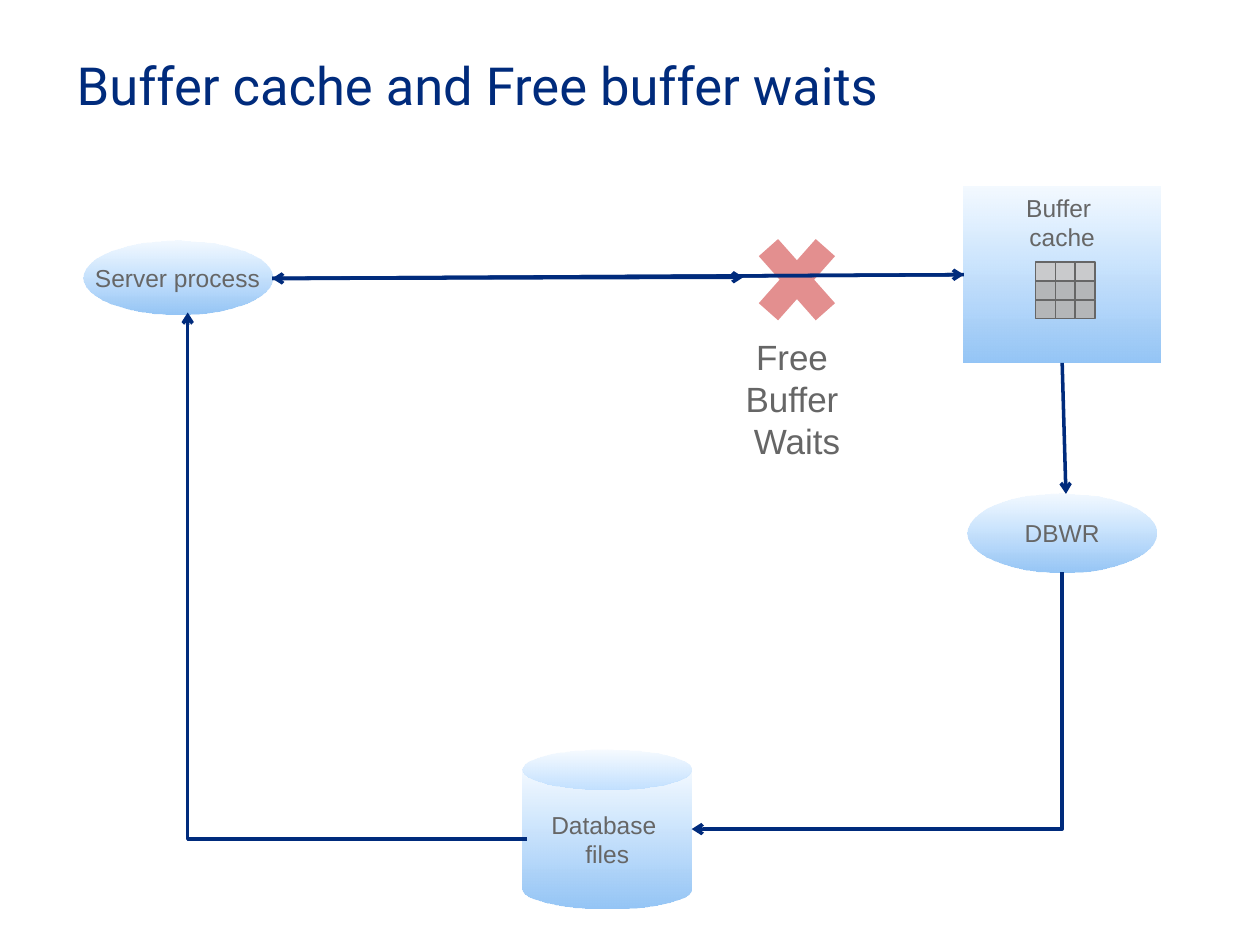
from itertools import product

from lxml.etree import SubElement
from pptx import Presentation
from pptx.dml.color import RGBColor
from pptx.enum.shapes import MSO_CONNECTOR, MSO_SHAPE
from pptx.enum.text import MSO_ANCHOR, PP_ALIGN
from pptx.oxml.ns import qn
from pptx.util import Inches, Pt

COLUMNS, ROWS = 100, 75
CELL = Inches(10) // COLUMNS
NAVY, GREY = "002B7C", "666666"


def rgb(hex_code):
    """Turn a hex string into a colour."""
    return RGBColor.from_string(hex_code)


def emu(*cells):
    """Convert grid cells to slide lengths."""
    return [round(cell * CELL) for cell in cells]


def set_alpha(fill_xml, percent):
    """Make the first colour inside a fill partly transparent."""
    colour = next(fill_xml.iter(qn("a:srgbClr")))
    SubElement(colour, qn("a:alpha")).set("val", str(percent * 1000))


def write(frame, text, size, colour, font="Arial", align=PP_ALIGN.CENTER):
    """Fill a text frame with evenly styled, unwrapped lines."""
    frame.word_wrap = False
    frame.text = text
    for paragraph in frame.paragraphs:
        paragraph.alignment = align
        paragraph.font.size = Pt(size)
        paragraph.font.name = font
        paragraph.font.color.rgb = rgb(colour)


def add_title(slide, box, text):
    """Place the slide title in its box."""
    title = slide.shapes.add_textbox(*emu(*box))
    write(title.text_frame, text, 30, NAVY, "Roboto", PP_ALIGN.LEFT)


def add_node(slide, box, kind, label, anchor=MSO_ANCHOR.MIDDLE):
    """Place a labelled shape that fades from pale to mid blue."""
    node = slide.shapes.add_shape(kind, *emu(*box))
    node.shadow.inherit = False
    node.line.fill.background()
    node.fill.gradient()
    node.fill.gradient_angle = 270
    for stop, colour in zip(node.fill.gradient_stops, ("99CCFF", "94C5F6")):
        stop.color.rgb = rgb(colour)
    set_alpha(node._element.spPr, 11)
    write(node.text_frame, label, 14, GREY)
    node.text_frame.vertical_anchor = anchor
    return node


def add_buffers(slide, box):
    """Place a three by three grid of buffers, the top row lighter."""
    left, top, width, height = box
    buffers = slide.shapes.add_group_shape()
    for row, column in product(range(3), repeat=2):
        place = emu(left + column * width / 3, top + row * height / 3, width / 3, height / 3)
        block = buffers.shapes.add_shape(MSO_SHAPE.RECTANGLE, *place)
        block.shadow.inherit = False
        block.fill.solid()
        block.fill.fore_color.rgb = rgb("B4B6B8" if row else "C9CACC")
        block.line.color.rgb = rgb(GREY)
        block.line.width = Pt(0.75)


def add_wait_cross(slide, box, label):
    """Place the translucent red cross with its label just below."""
    left, top, width, height = box
    cross = slide.shapes.add_shape(MSO_SHAPE.MATH_MULTIPLY, *emu(*box))
    cross.shadow.inherit = False
    cross.line.fill.background()
    cross.fill.solid()
    cross.fill.fore_color.rgb = rgb("C00000")
    set_alpha(cross._element.spPr, 44)
    caption = slide.shapes.add_textbox(*emu(left - 2, top + height - 1, width + 4, 11))
    write(caption.text_frame, label, 20, GREY)


def add_arrow(slide, start, end, kind=MSO_CONNECTOR.STRAIGHT):
    """Draw a navy connector with an open arrowhead at its end."""
    arrow = slide.shapes.add_connector(kind, *emu(*start, *end))
    arrow.line.color.rgb = rgb(NAVY)
    arrow.line.width = Pt(2)
    properties = arrow._element.spPr
    SubElement(properties.find(qn("a:ln")), qn("a:tailEnd")).set("type", "arrow")
    SubElement(properties, qn("a:effectLst"))
    return arrow


def add_corner_arrow(slide, start, end, turn):
    """Draw a one-corner arrow, turned clockwise by the given degrees."""
    (x1, y1), (x2, y2) = start, end
    width, height = abs(x2 - x1), abs(y2 - y1)
    if turn % 180:
        width, height = height, width
    left, top = (x1 + x2 - width) / 2, (y1 + y2 - height) / 2
    corner = add_arrow(slide, (left, top), (left + width, top + height), MSO_CONNECTOR.ELBOW)
    properties = corner._element.spPr
    properties.find(qn("a:prstGeom")).set("prst", "bentConnector2")
    properties.find(qn("a:xfrm")).set("rot", str(turn * 60000))


def add_cache_flow(slide, box):
    """Place the buffer cache diagram inside its box."""
    left, top, width, height = box
    right, bottom = left + width, top + height
    files = (left + 34.9, bottom - 12.6, 13.4, 12.6)
    add_node(slide, files, MSO_SHAPE.CAN, "Database \nfiles")
    cache = add_node(slide, (right - 15.6, top, 15.6, 14), MSO_SHAPE.RECTANGLE,
                     "Buffer \ncache", MSO_ANCHOR.TOP)
    add_node(slide, (right - 15.3, top + 24.4, 15, 6.2), MSO_SHAPE.OVAL, "DBWR")
    add_node(slide, (left, top + 4.3, 15, 5.9), MSO_SHAPE.OVAL, "Server process")

    cache_middle = right - 7.8
    process_side = (left + 15, top + 7.3)
    cache_side = (right - 15.6, top + 7)
    to_writer = add_arrow(slide, (cache_middle, top + 14), (right - 7.5, top + 24.4))
    to_writer.begin_connect(cache, 2)
    add_buffers(slide, (right - 9.9, top + 6, 4.7, 4.5))
    add_arrow(slide, process_side, (left + 52.4, top + 7.2))
    add_wait_cross(slide, (left + 52.3, top + 2.5, 8.7, 9.8), "Free \nBuffer \nWaits")
    add_corner_arrow(slide, (cache_middle, top + 30.6), (left + 48.3, bottom - 6.3), 90)
    add_arrow(slide, process_side, cache_side).end_connect(cache, 1)
    add_corner_arrow(slide, (left + 35.2, bottom - 5.5), (left + 8.3, top + 10), 180)
    add_arrow(slide, cache_side, process_side).begin_connect(cache, 1)


def main():
    """Build and save the slide."""
    deck = Presentation()
    deck.slide_width, deck.slide_height = emu(COLUMNS, ROWS)
    slide = deck.slides.add_slide(deck.slide_layouts[6])
    add_title(slide, (5.1, 3.7, 68.5, 6), "Buffer cache and Free buffer waits")
    add_cache_flow(slide, (6.6, 14.8, 85.5, 57.3))
    deck.save("out.pptx")


if __name__ == "__main__":
    main()
